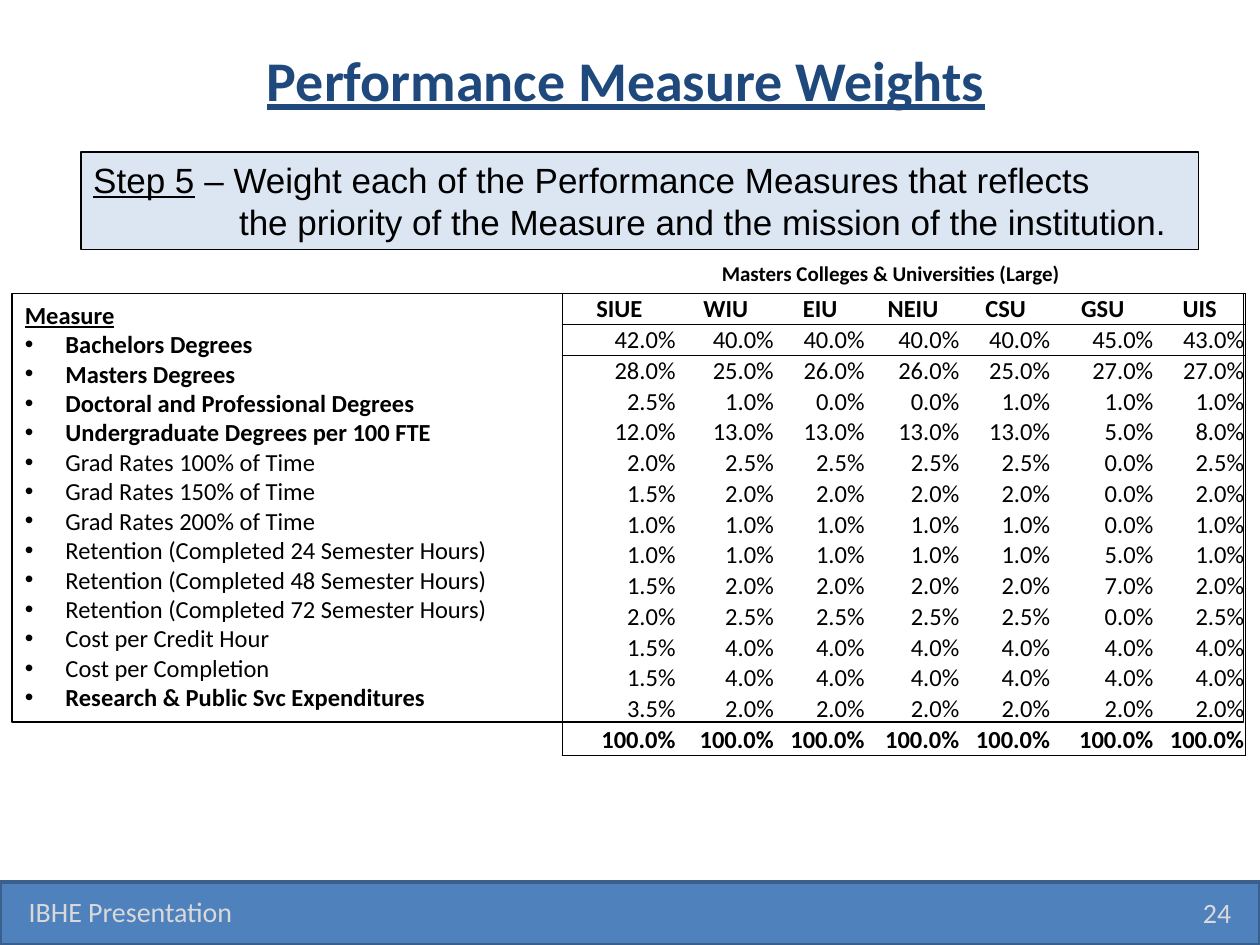
from lxml import etree
from pptx import Presentation, util as u
from pptx.dml.color import RGBColor
from pptx.enum import shapes, text
from pptx.oxml import ns

LEFT, MID, RIGHT = (text.PP_ALIGN.LEFT, text.PP_ALIGN.CENTER,
                    text.PP_ALIGN.RIGHT)
TOP, CENTRE, BASE = (text.MSO_ANCHOR.TOP, text.MSO_ANCHOR.MIDDLE,
                     text.MSO_ANCHOR.BOTTOM)
PLAIN = "{2D5ABB26-0587-4C30-8999-92F81FD0307C}"  # no style, no grid


def color(hex_str):
    return RGBColor.from_string(hex_str)


def put(obj, **vals):
    for key, val in vals.items():
        setattr(obj, key, val)


def place(obj, box):
    put(obj, **dict(zip(("left", "top", "width", "height"), map(u.Cm, box))))


class Deck:
    face, ink = "Calibri", "000000"

    def __init__(self, wide, high):
        self.prs = Presentation()
        put(self.prs, slide_width=u.Cm(wide), slide_height=u.Cm(high))
        self.slide = self.prs.slides.add_slide(self.prs.slide_layouts[5])

    def run(self, para, words, size, ink=None, **fmt):
        run = para.add_run()
        run.text = words
        put(run.font, **{"name": self.face, "size": u.Pt(size), **fmt})
        run.font.color.rgb = color(ink or self.ink)

    def title(self, words, box, size, ink):
        head = self.slide.shapes.title
        place(head, box)
        head.text_frame.vertical_anchor = CENTRE
        para = head.text_frame.paragraphs[0]
        para.alignment = MID
        self.run(para, words, size, ink, bold=True, underline=True)

    def rect(self, box, fill, line, width):
        rect = self.slide.shapes.add_shape(
            shapes.MSO_SHAPE.RECTANGLE, *map(u.Cm, box))
        rect.shadow.inherit = False
        if fill:
            rect.fill.solid()
            rect.fill.fore_color.rgb = color(fill)
        else:
            rect.fill.background()
        rect.line.color.rgb = color(line)
        rect.line.width = u.Pt(width)
        put(rect.text_frame, word_wrap=True, vertical_anchor=TOP)
        return rect.text_frame

    def label(self, words, box, align, size, ink):
        frame = self.slide.shapes.add_textbox(*map(u.Cm, box)).text_frame
        put(frame, word_wrap=True, vertical_anchor=CENTRE)
        para = frame.paragraphs[0]
        para.alignment = align
        self.run(para, words, size, ink)

    def para(self, frame, left=0, bullet=False):
        """Add a left-aligned paragraph, indented by left cm."""
        para = frame.paragraphs[0]
        if para.runs:
            para = frame.add_paragraph()
        para.alignment = LEFT
        props = para._p.get_or_add_pPr()
        props.set("marL", str(u.Cm(left)))
        if bullet:
            props.set("indent", str(-u.Cm(left)))
            etree.SubElement(props, ns.qn("a:buFont"), typeface="Arial")
            etree.SubElement(props, ns.qn("a:buChar"), char="•")
        return para

    def table(self, spot, cols, tall, rows):
        box = (*spot, sum(cols), tall * len(rows))
        grid = self.slide.shapes.add_table(
            len(rows), len(cols), *map(u.Cm, box)).table
        put(grid, first_row=False, horz_banding=False)
        grid._tbl.tblPr.find(ns.qn("a:tableStyleId")).text = PLAIN
        for col, wide in zip(grid.columns, cols):
            col.width = u.Cm(wide)
        for row in grid.rows:
            row.height = u.Cm(tall)
        for r, vals in enumerate(rows):
            for c, val in enumerate(vals):
                self.cell(grid.cell(r, c), val)
        return grid

    def cell(self, cell, val):
        words, size, align, bold = val
        put(cell, margin_left=u.Cm(0.02), margin_right=u.Cm(0.02),
            margin_top=u.Cm(0.02), margin_bottom=0, vertical_anchor=BASE)
        cell.fill.background()
        para = cell.text_frame.paragraphs[0]
        para.alignment = align
        if words:
            self.run(para, words, size, bold=bold)
        else:
            para.font.size = u.Pt(size)

    def edges(self, cell, sides, width):
        """Draw cell borders; sides come in the order L, R, T, B."""
        for i, side in enumerate(sides):
            line = etree.Element(ns.qn("a:ln" + side), w=str(u.Pt(width)))
            fill = etree.SubElement(line, ns.qn("a:solidFill"))
            etree.SubElement(fill, ns.qn("a:srgbClr"), val=self.ink)
            cell._tc.get_or_add_tcPr().insert(i, line)


# Measure, is it bold, weight at each school
SCHOOLS = "SIUE WIU EIU NEIU CSU GSU UIS".split()
DATA = [
    ("Bachelors Degrees", True, "42.0 40.0 40.0 40.0 40.0 45.0 43.0"),
    ("Masters Degrees", True, "28.0 25.0 26.0 26.0 25.0 27.0 27.0"),
    ("Doctoral and Professional Degrees", True,
     "2.5 1.0 0.0 0.0 1.0 1.0 1.0"),
    ("Undergraduate Degrees per 100 FTE", True,
     "12.0 13.0 13.0 13.0 13.0 5.0 8.0"),
    ("Grad Rates 100% of Time", False, "2.0 2.5 2.5 2.5 2.5 0.0 2.5"),
    ("Grad Rates 150% of Time", False, "1.5 2.0 2.0 2.0 2.0 0.0 2.0"),
    ("Grad Rates 200% of Time", False, "1.0 1.0 1.0 1.0 1.0 0.0 1.0"),
    ("Retention (Completed 24 Semester Hours)", False,
     "1.0 1.0 1.0 1.0 1.0 5.0 1.0"),
    ("Retention (Completed 48 Semester Hours)", False,
     "1.5 2.0 2.0 2.0 2.0 7.0 2.0"),
    ("Retention (Completed 72 Semester Hours)", False,
     "2.0 2.5 2.5 2.5 2.5 0.0 2.5"),
    ("Cost per Credit Hour", False, "1.5 4.0 4.0 4.0 4.0 4.0 4.0"),
    ("Cost per Completion", False, "1.5 4.0 4.0 4.0 4.0 4.0 4.0"),
    ("Research & Public Svc Expenditures", True,
     "3.5 2.0 2.0 2.0 2.0 2.0 2.0"),
]


def main():
    deck = Deck(25.4, 19.05)

    # Footer band
    deck.rect((0, 17.78, 25.4, 1.27), "4F81BD", "3A5F8C", 2)
    deck.label("IBHE Presentation", (0.33, 17.86, 8.05, 1.02), LEFT,
               16, "D9D9D9")
    deck.label("24", (23.83, 17.88, 1.24, 1.02), RIGHT, 16, "D9D9D9")

    # Title
    deck.title("Performance Measure Weights", (1.19, 0, 22.86, 3.18),
               32, "1F497D")

    # Step box
    step = deck.rect((1.63, 3.07, 22.53, 1.96), "DCE6F2", "000000", 1)
    para = deck.para(step)
    deck.run(para, "Step 5", 20, name="Arial", underline=True)
    deck.run(para, " – Weight each of the Performance Measures that reflects",
             20, name="Arial")
    deck.run(deck.para(step, 2.94), "the priority of the Measure and the "
             "mission of the institution.", 20, name="Arial")

    # Caption over the weights
    deck.table((14.53, 5.23), (7.06, 1.42, 1.45), 0.56, [
        [("Masters Colleges & Universities (Large)", 12, LEFT, True),
         ("", 12, LEFT, False), ("", 12, LEFT, False)]])

    # List of measures
    listing = deck.rect((0.25, 5.92, 24.82, 8.64), None, "000000", 1)
    deck.run(deck.para(listing), "Measure", 14, bold=True, underline=True)
    for name, bold, _ in DATA:
        deck.run(deck.para(listing, 0.82, True), name, 14, bold=bold)

    # Weights table
    rows = [[(name, 14, MID, True) for name in SCHOOLS]]
    rows += [[(val + "%", 14, RIGHT, False) for val in vals.split()]
             for _, _, vals in DATA]
    rows.append([("100.0%", 14, RIGHT, True)] * len(SCHOOLS))
    grid = deck.table((11.33, 5.92), (2.31, 1.98, 1.83, 1.91, 1.83, 2.08, 1.83),
                      0.62, rows)
    end, last = len(rows) - 1, len(SCHOOLS) - 1
    for r in range(end + 1):
        for c in range(last + 1):
            sides = (("L" if c == 0 else "") + ("R" if c == last else "")
                     + ("T" if r <= 1 else "") + ("B" if r in (0, end) else ""))
            deck.edges(grid.cell(r, c), sides, 0.5)

    deck.prs.save("out.pptx")


if __name__ == "__main__":
    main()
